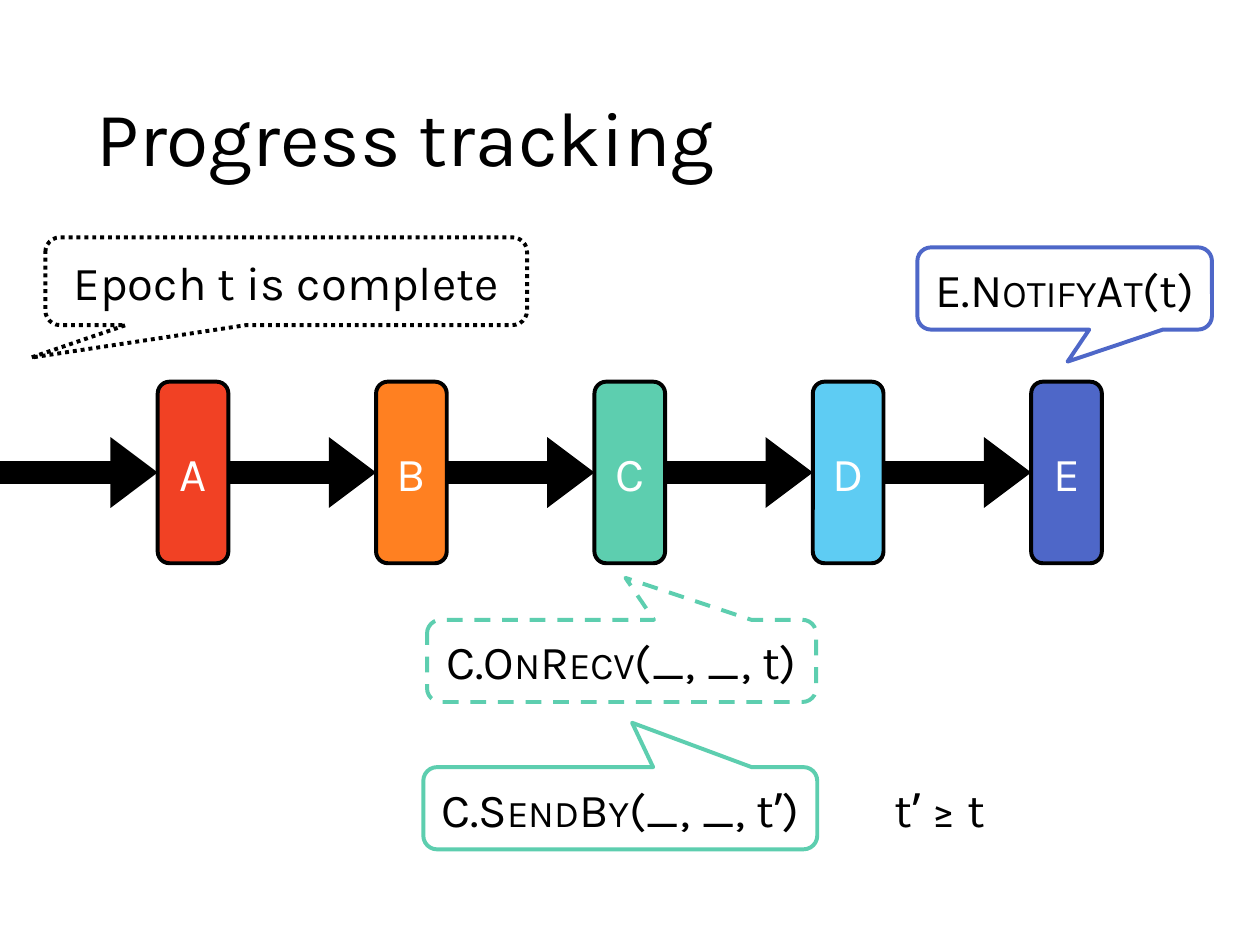
from dataclasses import dataclass

from lxml.etree import SubElement
from pptx import Presentation
from pptx.dml.color import RGBColor
from pptx.enum.dml import MSO_LINE
from pptx.enum.shapes import MSO_CONNECTOR, MSO_SHAPE
from pptx.enum.text import MSO_ANCHOR, MSO_AUTO_SIZE, PP_ALIGN
from pptx.oxml.ns import qn
from pptx.util import Cm, Pt


@dataclass(frozen=True)
class Theme:
    font: str = "Karla"
    title_size: float = 58.7
    text_size: float = 36
    outline: float = 3
    arrow: float = 18
    black: str = "000000"
    white: str = "FFFFFF"
    red: str = "F14124"
    orange: str = "FF8021"
    green: str = "5DCEAF"
    sky: str = "5ECCF3"
    indigo: str = "4E67C8"


theme = Theme()


def add_run(paragraph, text, size, color, small_caps=False):
    run = paragraph.add_run()
    run.text = text
    run.font.name = theme.font
    run.font.size = Pt(size)
    run.font.color.rgb = RGBColor.from_string(color)
    if small_caps:
        run._r.get_or_add_rPr().set("cap", "small")


def add_box(kind, place, fill, line, text_color, runs, dash=None):
    """Add a filled shape with centred text; runs are (text, small_caps) pairs."""
    shape = slide.shapes.add_shape(kind, *(Cm(value) for value in place))
    shape.shadow.inherit = False
    shape.fill.solid()
    shape.fill.fore_color.rgb = RGBColor.from_string(fill)
    if line:
        shape.line.color.rgb = RGBColor.from_string(line)
        shape.line.width = Pt(theme.outline)
        if dash:
            shape.line.dash_style = dash
    else:
        shape.line.fill.background()
    frame = shape.text_frame
    frame.word_wrap = True
    frame.vertical_anchor = MSO_ANCHOR.MIDDLE
    paragraph = frame.paragraphs[0]
    paragraph.alignment = PP_ALIGN.CENTER
    for text, small_caps in runs:
        add_run(paragraph, text, theme.text_size, text_color, small_caps)
    return shape


presentation = Presentation()
presentation.slide_width = Cm(33.87)
presentation.slide_height = Cm(25.4)
slide = presentation.slides.add_slide(presentation.slide_layouts[5])

# Title
title = slide.shapes.title
title.left, title.top, title.width, title.height = Cm(2.34), Cm(1.35), Cm(30.28), Cm(4.9)
title.text_frame.auto_size = MSO_AUTO_SIZE.NONE
title.text_frame.vertical_anchor = MSO_ANCHOR.MIDDLE
paragraph = title.text_frame.paragraphs[0]
paragraph.alignment = PP_ALIGN.LEFT
paragraph.line_spacing = 0.9
add_run(paragraph, "Progress tracking", theme.title_size, theme.black)

# Pipeline: an arrow leads into each stage, the first from the slide edge
stages = [
    ("A", theme.red),
    ("B", theme.orange),
    ("C", theme.green),
    ("D", theme.sky),
    ("E", theme.indigo),
]
first_left, pitch = 4.24, 5.87
stage_width, stage_height, middle = 1.9, 4.88, 12.7

for index, (name, color) in enumerate(stages):
    left = first_left + index * pitch
    start = left - pitch + stage_width if index else -1.7
    arrow = slide.shapes.add_connector(
        MSO_CONNECTOR.STRAIGHT, Cm(start), Cm(middle), Cm(left), Cm(middle)
    )
    arrow.line.color.rgb = RGBColor.from_string(theme.black)
    arrow.line.width = Pt(theme.arrow)
    SubElement(arrow.line._get_or_add_ln(), qn("a:tailEnd"), type="triangle", w="med", len="sm")
    SubElement(arrow._element.spPr, qn("a:effectLst"))

    place = (left, middle - stage_height / 2, stage_width, stage_height)
    add_box(MSO_SHAPE.ROUNDED_RECTANGLE, place, color, theme.black, theme.white, [(name, False)])

# Callouts: place, pointer tip, outline, dash, runs
callouts = [
    ((24.66, 6.65, 7.92, 2.21), (0.01, 0.89), theme.indigo, None,
     [("E.", False), ("NotifyAt", True), ("(t)", False)]),
    ((11.48, 16.66, 10.46, 2.21), (0.01, -1.01), theme.green, MSO_LINE.DASH,
     [("C.", False), ("OnRecv", True), ("(_, _, t)", False)]),
    ((11.38, 20.62, 10.59, 2.21), (0.03, -1.04), theme.green, None,
     [("C.", False), ("SendBy", True), ("(_, _, tʹ)", False)]),
    ((22.81, 20.62, 4.93, 2.21), (0.03, -1.04), None, None,
     [("tʹ ≥ t", False)]),
    ((1.22, 6.38, 12.95, 2.36), (-0.53, 0.87), theme.black, MSO_LINE.ROUND_DOT,
     [("Epoch t is complete", False)]),
]
for place, tip, line, dash, runs in callouts:
    callout = add_box(
        MSO_SHAPE.ROUNDED_RECTANGULAR_CALLOUT, place, theme.white, line, theme.black, runs, dash
    )
    callout.adjustments[0], callout.adjustments[1] = tip

presentation.save("out.pptx")
